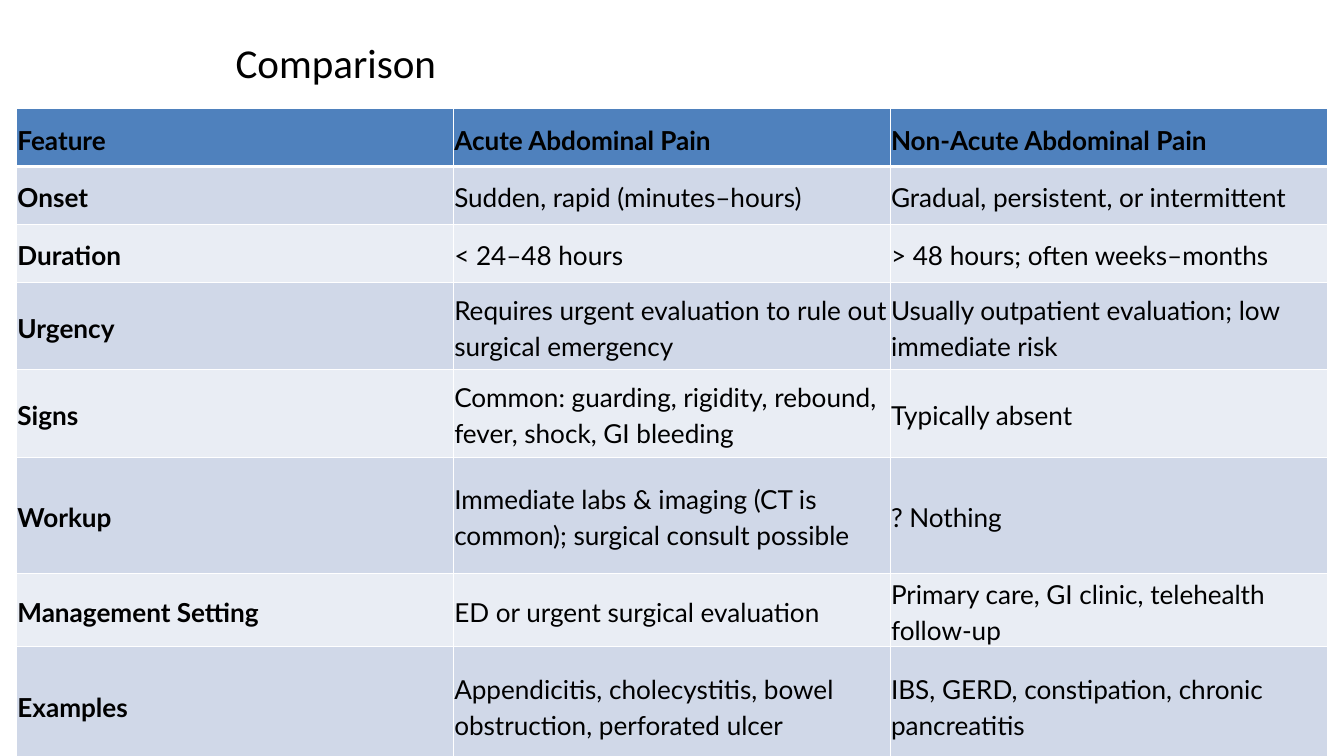
"""Build the slide comparing acute and non-acute abdominal pain."""
from pptx import Presentation
from pptx import util as u
from pptx.dml.color import RGBColor
from pptx.enum import text
from pptx.oxml import parse_xml
from pptx.oxml.ns import nsdecls

BLACK = RGBColor(0x00, 0x00, 0x00)
WHITE = RGBColor(0xFF, 0xFF, 0xFF)
HEADER = RGBColor(0x4F, 0x81, 0xBD)
BANDS = (RGBColor(0xE9, 0xED, 0xF4), RGBColor(0xD0, 0xD8, 0xE8))

TITLE_FONT = {"name": "Calibri", "size": u.Pt(44), "bold": False}
CELL_FONT = {"name": "Lato", "size": u.Pt(28)}
CELL_FORMAT = {
    "vertical_anchor": text.MSO_ANCHOR.MIDDLE,
    "margin_left": u.Inches(0.01),
    "margin_right": u.Inches(0.01),
    "margin_top": u.Inches(0.01),
    "margin_bottom": u.Inches(0.01),
}
PARAGRAPH_FORMAT = {"line_spacing": 1.15, "space_after": u.Pt(8)}

COLUMN_WIDTH = 6.5
ROW_HEIGHTS = (0.86, 0.86, 0.86, 1.3, 1.3, 1.73, 0.86, 1.73)
ROWS = (
    ("Feature", "Acute Abdominal Pain", "Non‑Acute Abdominal Pain"),
    ("Onset", "Sudden, rapid (minutes–hours)", "Gradual, persistent, or intermittent"),
    ("Duration", "< 24–48 hours", "> 48 hours; often weeks–months"),
    ("Urgency", "Requires urgent evaluation to rule out surgical emergency",
     "Usually outpatient evaluation; low immediate risk"),
    ("Signs", "Common: guarding, rigidity, rebound, fever, shock, GI bleeding",
     "Typically absent"),
    ("Workup", "Immediate labs & imaging (CT is common); surgical consult possible",
     "? Nothing"),
    ("Management Setting", "ED or urgent surgical evaluation",
     "Primary care, GI clinic, telehealth follow‑up"),
    ("Examples", "Appendicitis, cholecystitis, bowel obstruction, perforated ulcer",
     "IBS, GERD, constipation, chronic pancreatitis"),
)


def apply(target, values):
    """Set each named attribute of the target."""
    for name, value in values.items():
        setattr(target, name, value)


def add_text(p, content, font):
    """Write one formatted black run into a paragraph."""
    r = p.add_run()
    r.text = content
    apply(r.font, font)
    r.font.color.rgb = BLACK


def set_borders(cell, widths):
    """Give the cell white borders with widths in points, by side."""
    tc_pr = cell._tc.get_or_add_tcPr()
    for side, width in widths.items():
        tc_pr.append(parse_xml(
            f'<a:{side} {nsdecls("a")} w="{u.Pt(width)}"><a:solidFill>'
            f'<a:srgbClr val="{WHITE}"/></a:solidFill></a:{side}>'))


def fill_cell(cell, content, row, column):
    """Format and fill one table cell according to its place."""
    apply(cell, CELL_FORMAT)
    set_borders(cell, {"lnL": 1, "lnR": 1, "lnT": 3 if row == 1 else 1,
                       "lnB": 3 if row == 0 else 1})
    cell.fill.solid()
    cell.fill.fore_color.rgb = BANDS[row % 2] if row else HEADER
    p = cell.text_frame.paragraphs[0]
    apply(p, PARAGRAPH_FORMAT)
    add_text(p, content, {**CELL_FONT, "bold": row == 0 or column == 0})


def add_title(s, content):
    """Place and fill the title placeholder."""
    sp = s.shapes.title
    apply(sp, {"left": u.Inches(0.5), "top": u.Inches(0.3),
               "width": u.Inches(9), "height": u.Inches(1.25)})
    tf = sp.text_frame
    tf.vertical_anchor = text.MSO_ANCHOR.MIDDLE
    p = tf.paragraphs[0]
    p.alignment = text.PP_ALIGN.CENTER
    add_text(p, content, TITLE_FONT)


def add_comparison(s):
    """Add the comparison table."""
    columns = len(ROWS[0])
    table = s.shapes.add_table(
        len(ROWS), columns, u.Inches(0.25), u.Inches(1.62),
        u.Inches(COLUMN_WIDTH * columns), u.Inches(sum(ROW_HEIGHTS))).table
    for column in table.columns:
        column.width = u.Inches(COLUMN_WIDTH)
    for i, (height, row) in enumerate(zip(ROW_HEIGHTS, ROWS)):
        table.rows[i].height = u.Inches(height)
        for j, content in enumerate(row):
            fill_cell(table.cell(i, j), content, i, j)


def main():
    """Create the presentation and save it."""
    prs = Presentation()
    prs.slide_width, prs.slide_height = u.Inches(20), u.Inches(11.25)
    s = prs.slides.add_slide(prs.slide_layouts[5])
    add_title(s, "Comparison")
    add_comparison(s)
    prs.save("out.pptx")


if __name__ == "__main__":
    main()
